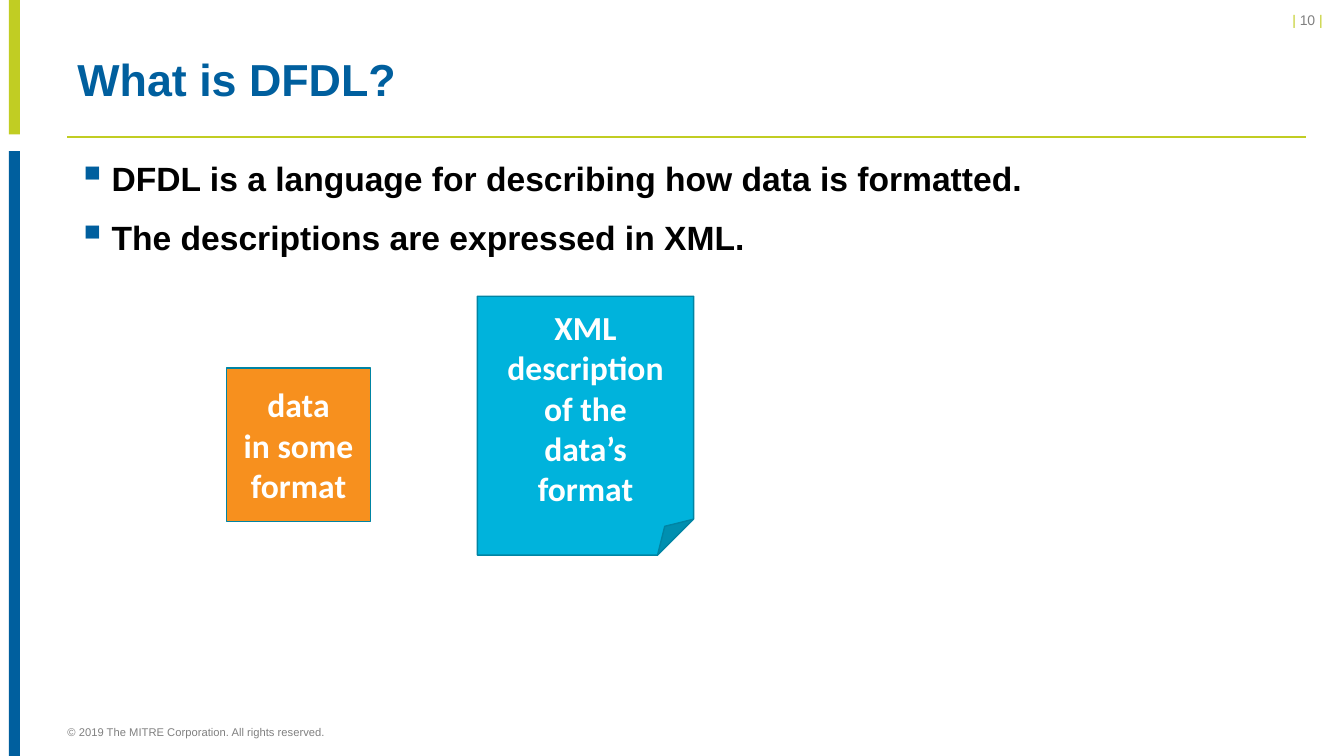
import dataclasses

import lxml.etree
import pptx
import pptx.dml.color
import pptx.enum.shapes
import pptx.enum.text
import pptx.oxml.ns
import pptx.util

Pt = pptx.util.Pt
SHAPE = pptx.enum.shapes.MSO_SHAPE
ALIGN = pptx.enum.text.PP_ALIGN
ANCHOR = pptx.enum.text.MSO_ANCHOR


@dataclasses.dataclass(frozen=True)
class Theme:
    lime: str = "C1CD23"
    blue: str = "005F9E"
    orange: str = "F7901E"
    cyan: str = "00B3DC"
    outline: str = "0084A3"
    grey: str = "808080"
    black: str = "000000"
    white: str = "FFFFFF"
    heading_font: str = "Arial"
    shape_font: str = "Calibri"
    title_size: int = 32
    body_size: int = 24
    number_size: int = 10
    footer_size: int = 8


def rgb(color):
    return pptx.dml.color.RGBColor.from_string(color)


def add_child(parent, tag, **attributes):
    return lxml.etree.SubElement(parent, pptx.oxml.ns.qn(tag), attributes)


class SlideBuilder:
    def __init__(self, slide, theme):
        self.slide = slide
        self.theme = theme

    def style(self, font, size, color, bold=False, name=None):
        font.name = name or self.theme.heading_font
        font.size = Pt(size)
        font.bold = bold
        font.color.rgb = rgb(color)

    def shape(self, kind, box, fill, line=None):
        sp = self.slide.shapes.add_shape(kind, *map(Pt, box))
        sp.shadow.inherit = False
        sp.fill.solid()
        sp.fill.fore_color.rgb = rgb(fill)
        if line:
            sp.line.color.rgb = rgb(line)
            sp.line.width = Pt(1)
        else:
            sp.line.fill.background()
        return sp

    def labelled_shape(self, kind, box, fill, lines):
        tf = self.shape(kind, box, fill, self.theme.outline).text_frame
        tf.word_wrap = True
        tf.vertical_anchor = ANCHOR.MIDDLE
        tf.text = "\n".join(lines)
        for p in tf.paragraphs:
            p.alignment = ALIGN.CENTER
            self.style(p.font, self.theme.body_size, self.theme.white, True, self.theme.shape_font)

    def rule(self, x1, x2, y, color):
        line = self.slide.shapes.add_connector(
            pptx.enum.shapes.MSO_CONNECTOR.STRAIGHT, Pt(x1), Pt(y), Pt(x2), Pt(y))
        line.line.color.rgb = rgb(color)
        line.line.width = Pt(1)
        add_child(line._element.spPr, "a:effectLst")

    def text_frame(self, box, anchor=ANCHOR.TOP):
        tf = self.slide.shapes.add_textbox(*map(Pt, box)).text_frame
        tf.word_wrap = True
        tf.vertical_anchor = anchor
        return tf

    def text(self, box, text, size, color, bold=False, line_spacing=None, inset=True):
        tf = self.text_frame(box, ANCHOR.MIDDLE)
        if not inset:
            tf.margin_left = tf.margin_top = tf.margin_right = tf.margin_bottom = 0
        p = tf.paragraphs[0]
        p.text = text
        p.line_spacing = line_spacing
        self.style(p.font, size, color, bold)

    def bullets(self, box, items):
        tf = self.text_frame(box)
        tf.text = "\n".join(items)
        indent = Pt(24.5)
        for p in tf.paragraphs:
            p.line_spacing = Pt(30)
            p.space_after = Pt(12)
            pPr = p._p.get_or_add_pPr()
            pPr.set("marL", str(indent))
            pPr.set("indent", str(-indent))
            add_child(add_child(pPr, "a:buClr"), "a:srgbClr", val=self.theme.blue)
            add_child(pPr, "a:buSzPct", val="120000")
            add_child(pPr, "a:buChar", char="▪")
            self.style(p.font, self.theme.body_size, self.theme.black, True)

    def page_number(self, box, number):
        p = self.text_frame(box).paragraphs[0]
        p.alignment = ALIGN.RIGHT
        p.space_after = Pt(6)
        bar, digits = self.theme.lime, self.theme.grey
        for text, color in (("| ", bar), (f"{number} ", digits), ("|", bar)):
            r = p.add_run()
            r.text = text
            self.style(r.font, self.theme.number_size, color)


def main():
    prs = pptx.Presentation()
    prs.slide_width, prs.slide_height = Pt(960), Pt(540)
    theme = Theme()
    s = SlideBuilder(prs.slides.add_slide(prs.slide_layouts[6]), theme)
    left, width = 48.2, 885

    s.shape(SHAPE.RECTANGLE, (6.3, 0, 8, 96), theme.lime)
    s.shape(SHAPE.RECTANGLE, (6.3, 108, 8, 432), theme.blue)
    s.rule(left, left + width, 97.8, theme.lime)
    s.page_number((783.4, 5, 168.5, 19.4), 10)

    s.text((left, 28.8, width, 59), "What is DFDL?",
           theme.title_size, theme.blue, bold=True, line_spacing=0.9)
    s.bullets((left, 108, width, 74), (
        "DFDL is a language for describing how data is formatted.",
        "The descriptions are expressed in XML."))
    s.text((left, 513.4, 593, 18.7), "© 2019 The MITRE Corporation. All rights reserved.",
           theme.footer_size, theme.grey, inset=False)

    s.labelled_shape(SHAPE.RECTANGLE, (162, 262.8, 102.5, 109.8), theme.orange,
                     ("data", "in some", "format"))
    s.labelled_shape(SHAPE.FOLDED_CORNER, (341, 211.6, 154.4, 185), theme.cyan,
                     ("XML description", "of the", "data’s", "format"))
    prs.save("out.pptx")


if __name__ == "__main__":
    main()
